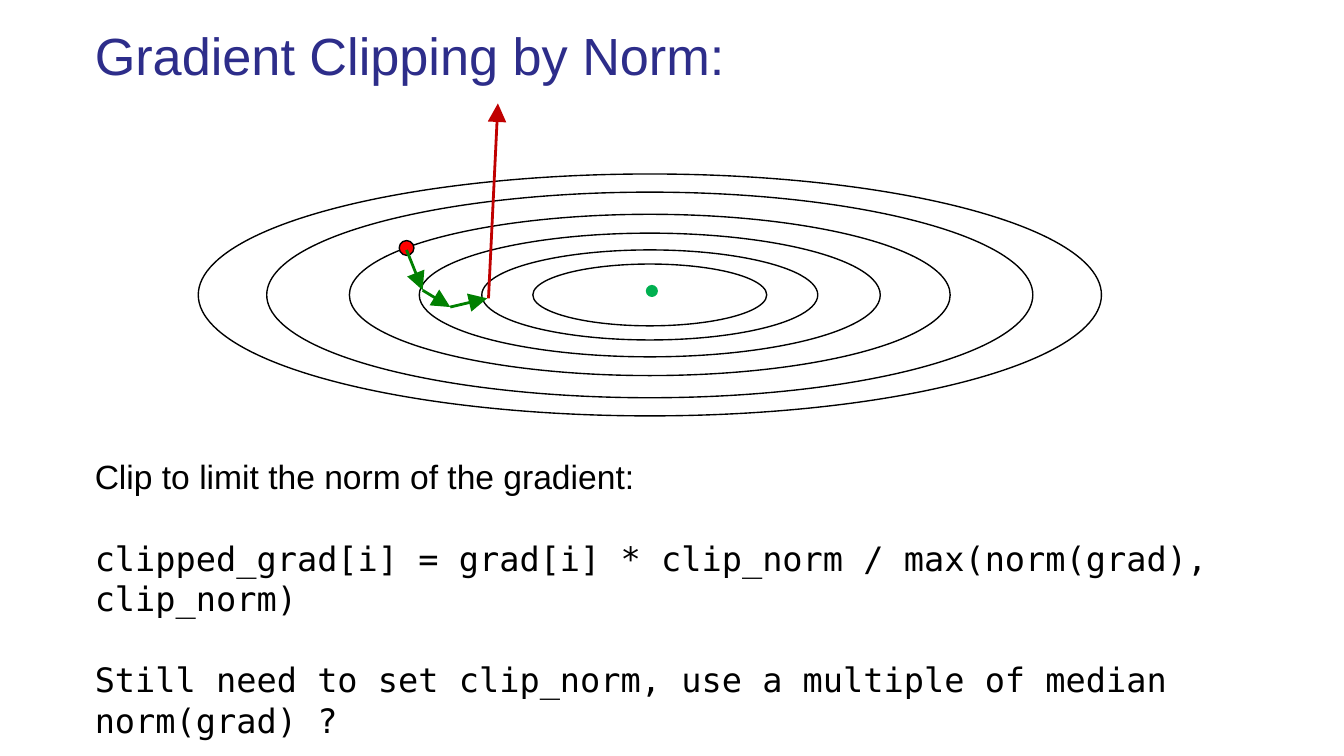
import itertools

import pptx
import pptx.dml.color
import pptx.enum.shapes
import pptx.enum.text
import pptx.oxml.ns
import pptx.util
from lxml import etree

RGB = pptx.dml.color.RGBColor
BLACK = RGB(0x00, 0x00, 0x00)
NAVY = RGB(0x2D, 0x2D, 0x8A)
RED = RGB(0xFF, 0x00, 0x00)
CRIMSON = RGB(0xC0, 0x00, 0x00)
GREEN = RGB(0x00, 0x80, 0x00)
LIME = RGB(0x00, 0xB0, 0x50)

SANS = "Arial"
MONO = "DejaVu Sans Mono"
SCALE = 4572  # EMU in one px, 200 px to the inch
RINGS = [(1344, 360), (1140, 306), (894, 240), (686, 184), (500, 134), (348, 92)]
STEPS = [(310, 218), (334, 278), (375, 303), (430, 290)]


def emu(*lengths):
    return [pptx.util.Emu(n * SCALE) for n in lengths]


def frame(shape):
    """Give a text shape its insets, wrapping and top anchor."""
    body = shape.text_frame
    body.word_wrap = True
    body.auto_size = pptx.enum.text.MSO_AUTO_SIZE.NONE
    body.vertical_anchor = pptx.enum.text.MSO_ANCHOR.TOP
    (inset,) = emu(15)
    body.margin_left = body.margin_right = inset
    body.margin_top = body.margin_bottom = inset
    return body


def write(para, text, *, size=18, font=SANS, color=BLACK, before=0):
    para.alignment = pptx.enum.text.PP_ALIGN.LEFT
    para.space_before = pptx.util.Pt(before)
    run = para.add_run()
    run.text = text
    run.font.size = pptx.util.Pt(size)
    run.font.name = font
    run.font.color.rgb = color


def oval(slide, x, y, wide, high, fill=None, line=None):
    shape = slide.shapes.add_shape(
        pptx.enum.shapes.MSO_SHAPE.OVAL, *emu(x, y, wide, high))
    shape.shadow.inherit = False
    if fill is None:
        shape.fill.background()
    else:
        shape.fill.solid()
        shape.fill.fore_color.rgb = fill
    if line is None:
        shape.line.fill.background()
    else:
        shape.line.color.rgb = line
        shape.line.width = pptx.util.Pt(0.75)


def arrow(slide, start, end, color):
    link = slide.shapes.add_connector(
        pptx.enum.shapes.MSO_CONNECTOR.STRAIGHT, *emu(*start, *end))
    link.line.color.rgb = color
    link.line.width = pptx.util.Pt(1.5)
    qn = pptx.oxml.ns.qn
    props = link._element.spPr
    etree.SubElement(props.find(qn("a:ln")), qn("a:tailEnd"),
                     type="triangle", w="lg", len="lg")
    etree.SubElement(props, qn("a:effectLst"))


def head(slide, box):
    title = slide.shapes.title
    title.left, title.top, title.width, title.height = emu(*box)
    write(frame(title).paragraphs[0], "Gradient Clipping by Norm:",
          size=28, color=NAVY)


def contour(slide, box):
    """Draw the loss contours and the gradient steps, the last one too long."""
    left, top, wide, high = box

    def at(point):
        return left + point[0], top + point[1]

    mid, base = at((wide // 2, high - RINGS[0][1] // 2))
    for w, h in RINGS:
        oval(slide, mid - w // 2, base - h // 2, w, h, line=BLACK)
    oval(slide, *at((299, 204)), 22, 22, fill=RED, line=BLACK)
    oval(slide, *at((666, 270)), 18, 18, fill=LIME)
    for start, end in itertools.pairwise(STEPS):
        arrow(slide, at(start), at(end), GREEN)
    arrow(slide, at((432, 290)), at((446, 0)), CRIMSON)


def notes(slide, box):
    """Write the clipping rule below the contours."""
    body = frame(slide.shapes.add_textbox(*emu(*box)))
    write(body.paragraphs[0], "Clip to limit the norm of the gradient:")
    for text in (
        "clipped_grad[i] = grad[i] * clip_norm / max(norm(grad), clip_norm)",
        "Still need to set clip_norm, use a multiple of median norm(grad) ?",
    ):
        write(body.add_paragraph(), text, font=MONO, before=22)


def main():
    deck = pptx.Presentation()
    deck.slide_width, deck.slide_height = emu(2000, 1125)
    slide = deck.slides.add_slide(deck.slide_layouts[5])
    notes(slide, (126, 664, 1778, 342))
    head(slide, (126, 20, 1450, 186))
    contour(slide, (295, 154, 1344, 465))
    deck.save("out.pptx")


if __name__ == "__main__":
    main()
